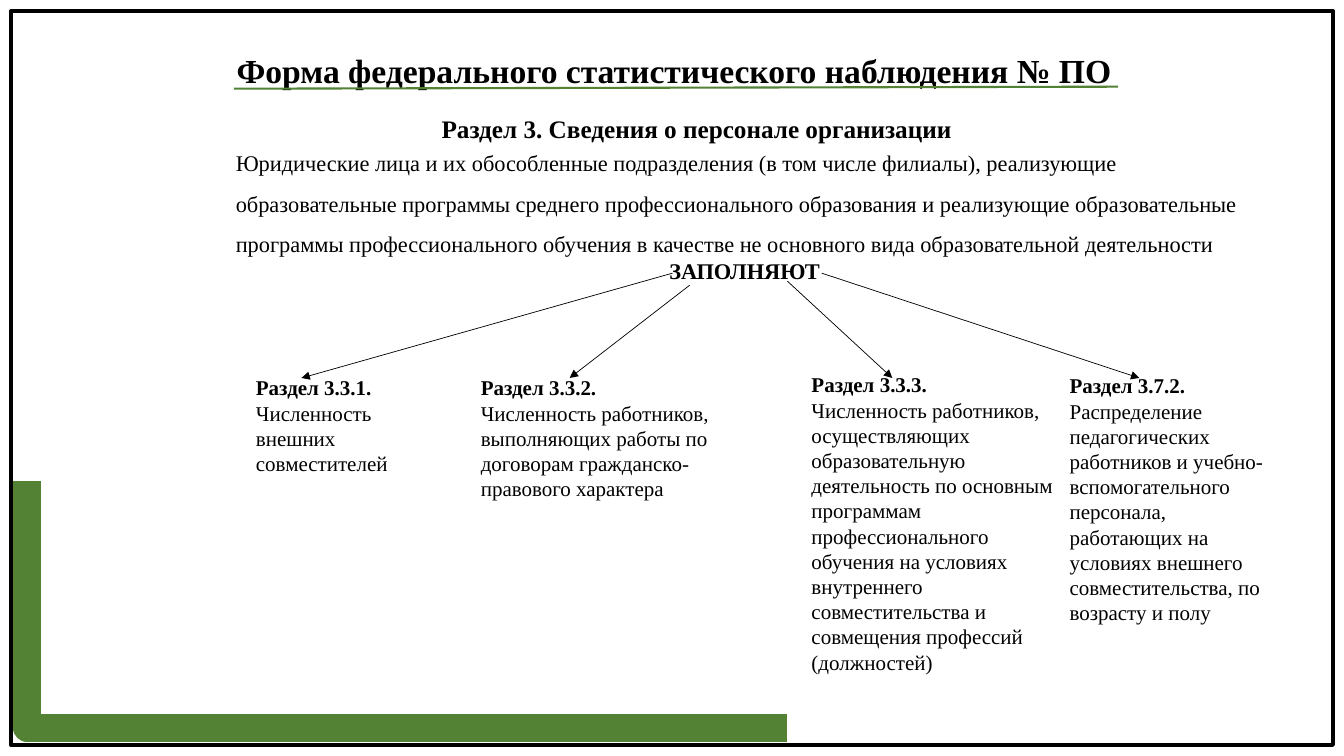
from pptx import Presentation
from pptx.dml.color import RGBColor
from pptx.enum import shapes, text
from pptx.oxml.ns import qn
from pptx.util import Inches, Pt
from lxml import etree

INK = {"black": "000000", "green": "548235"}
FONT = "Times New Roman"

TITLE = "Форма федерального статистического наблюдения № ПО"
HEAD = "Раздел 3. Сведения о персонале организации"
INTRO = ("Юридические лица и их обособленные подразделения (в том числе филиалы), "
         "реализующие образовательные программы среднего профессионального образования "
         "и реализующие образовательные программы профессионального обучения в качестве "
         "не основного вида образовательной деятельности")
FILL = "ЗАПОЛНЯЮТ"

# Section name, wording, box (left, top, width, height), arrow start, arrow tip x
PARTS = [
    ("Раздел 3.3.1.", "Численность внешних совместителей",
     (2.44, 3.67, 1.76, 1.11), (6.67, 2.71), 2.99),
    ("Раздел 3.3.2.", "Численность работников, выполняющих работы по договорам "
     "гражданско-правового характера",
     (4.67, 3.67, 2.48, 1.36), (6.84, 2.83), 5.65),
    ("Раздел 3.3.3.", "Численность работников, осуществляющих образовательную "
     "деятельность по основным программам профессионального обучения на условиях "
     "внутреннего совместительства и совмещения профессий (должностей)",
     (7.95, 3.64, 2.81, 3.38), (7.81, 2.79), 8.85),
    ("Раздел 3.7.2.", "Распределение педагогических работников и "
     "учебно-вспомогательного персонала, работающих на условиях внешнего "
     "совместительства, по возрасту и полу",
     (10.51, 3.65, 2.32, 2.63), (8.15, 2.71), 11.3),
]
TIP = 3.75

deck = Presentation()
deck.slide_width, deck.slide_height = Inches(13.33), Inches(7.5)
slide = deck.slides.add_slide(deck.slide_layouts[6])


def color(name):
    return RGBColor.from_string(INK[name])


def stroke(item, name, width):
    item.line.color.rgb = color(name)
    item.line.width = Pt(width)


def outline(shape, name, width):
    shape.shadow.inherit = False
    shape.fill.background()
    stroke(shape, name, width)


def write(box, rows):
    """Each row is wording, size, bold, centred, line spacing."""
    frame = slide.shapes.add_textbox(*map(Inches, box)).text_frame
    frame.word_wrap = True
    for i, (words, size, bold, mid, gap) in enumerate(rows):
        para = frame.add_paragraph() if i else frame.paragraphs[0]
        para.text = words
        para.alignment = text.PP_ALIGN.CENTER if mid else text.PP_ALIGN.LEFT
        para.line_spacing = gap
        para.font.name, para.font.size, para.font.bold = FONT, Pt(size), bold
        para.font.color.rgb = color("black")


def link(start, end, name, width, arrow=False):
    line = slide.shapes.add_connector(
        shapes.MSO_CONNECTOR.STRAIGHT, *map(Inches, start + end))
    stroke(line, name, width)
    if arrow:
        etree.SubElement(line.line._get_or_add_ln(), qn("a:tailEnd"), type="triangle")
    etree.SubElement(line._element.spPr, qn("a:effectLst"))


# Frame and green corner
frame = slide.shapes.add_shape(
    shapes.MSO_SHAPE.RECTANGLE, *map(Inches, (0.11, 0.11, 13.11, 7.28)))
outline(frame, "black", 3)
path = slide.shapes.build_freeform(Inches(0.27), Inches(4.77))
path.add_line_segments(
    [(Inches(0.27), Inches(7.22)), (Inches(7.81), Inches(7.22))], close=False)
outline(path.convert_to_shape(), "green", 20)

# Title and introduction
write((0.38, 0.45, 12.61, 0.5), [(TITLE, 24, True, True, 1.0)])
link((2.32, 0.88), (11.09, 0.86), "green", 1.5)
write((1.87, 1.07, 10.08, 0.71), [(HEAD, 18, True, True, 1.0)])
write((2.24, 1.3, 10.29, 4.04),
      [(INTRO, 16, False, False, 1.5), (FILL, 16, True, True, 1.0)])

# Sections with their arrows
for name, words, box, start, tip in PARTS:
    link(start, (tip, TIP), "black", 0.5, arrow=True)
    write(box, [(name, 15, True, False, 1.0), (words, 15, False, False, 1.0)])

deck.save("out.pptx")
